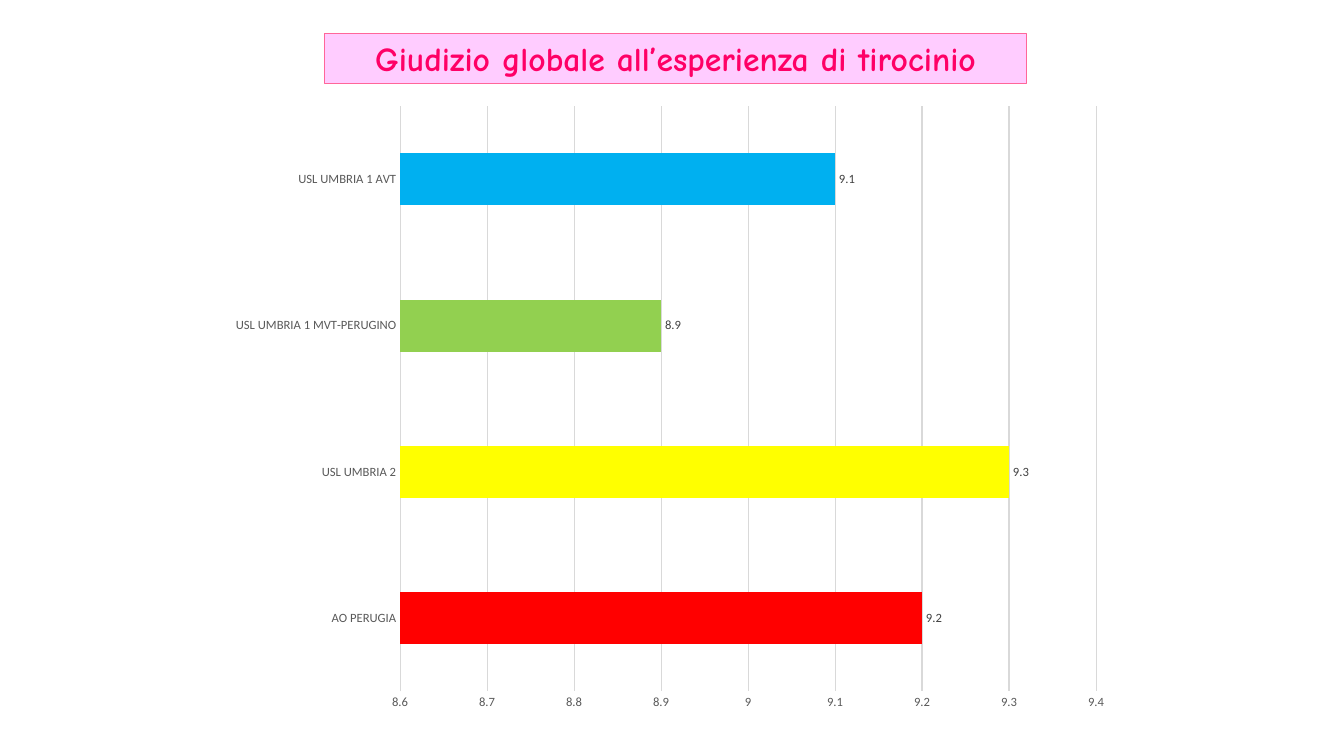
from dataclasses import dataclass

from pptx import Presentation
from pptx import util as u
from pptx.chart.data import CategoryChartData
from pptx.dml.color import RGBColor
from pptx.enum import chart as charts
from pptx.enum import shapes, text

COLORS = {
    "title_fill": "FFCCFF", "title_line": "FF6699", "title_text": "FF0066",
    "grid": "D9D9D9", "axis_text": "595959", "label_text": "404040",
    "black": "000000", "series": "FFC000",
    "red": "FF0000", "yellow": "FFFF00", "green": "92D050", "blue": "00B0F0",
}


@dataclass
class Rating:
    site: str
    score: float
    color: str


# Bars from bottom to top
RATINGS = [
    Rating("AO PERUGIA", 9.2, "red"),
    Rating("USL UMBRIA 2", 9.3, "yellow"),
    Rating("USL UMBRIA 1 MVT-PERUGINO", 8.9, "green"),
    Rating("USL UMBRIA 1 AVT", 9.1, "blue"),
]


def rgb(name: str) -> RGBColor:
    return RGBColor.from_string(COLORS[name])


def set_font(font, size: float, color: str, name: str = "Calibri", bold: bool = False) -> None:
    font.name = name
    font.size = u.Pt(size)
    font.bold = bold
    font.color.rgb = rgb(color)


def set_fill(fill, color: str) -> None:
    fill.solid()
    fill.fore_color.rgb = rgb(color)


def set_line(line, color: str) -> None:
    line.color.rgb = rgb(color)
    line.width = u.Pt(0.75)


def add_title(slide) -> None:
    shape = slide.shapes.add_shape(
        shapes.MSO_SHAPE.RECTANGLE,
        u.Inches(3.22), u.Inches(0.33), u.Inches(6.96), u.Inches(0.5))
    shape.shadow.inherit = False
    set_fill(shape.fill, "title_fill")
    set_line(shape.line, "title_line")
    frame = shape.text_frame
    frame.word_wrap = True
    frame.auto_size = text.MSO_AUTO_SIZE.SHAPE_TO_FIT_TEXT
    frame.vertical_anchor = text.MSO_ANCHOR.TOP
    paragraph = frame.paragraphs[0]
    paragraph.text = "Giudizio globale all’esperienza di tirocinio"
    paragraph.alignment = text.PP_ALIGN.CENTER
    set_font(paragraph.font, 24, "title_text", "Comic Neue", bold=True)


def style_axis(axis) -> None:
    axis.major_tick_mark = charts.XL_TICK_MARK.NONE
    axis.minor_tick_mark = charts.XL_TICK_MARK.NONE
    set_font(axis.tick_labels.font, 9, "axis_text")


def add_ratings_chart(slide) -> None:
    data = CategoryChartData()
    data.categories = [rating.site for rating in RATINGS]
    data.add_series("Series 1", [rating.score for rating in RATINGS])
    chart = slide.shapes.add_chart(
        charts.XL_CHART_TYPE.BAR_CLUSTERED,
        u.Inches(2.16), u.Inches(0.93), u.Inches(8.97), u.Inches(6.24), data).chart
    chart.has_title = False
    chart.has_legend = False
    set_font(chart.font, 10, "black")

    # Axes
    style_axis(chart.category_axis)
    set_line(chart.category_axis.format.line, "grid")
    value_axis = chart.value_axis
    style_axis(value_axis)
    value_axis.minimum_scale = 8.6
    value_axis.maximum_scale = 9.4
    value_axis.major_unit = 0.1
    value_axis.format.line.fill.background()
    value_axis.has_major_gridlines = True
    set_line(value_axis.major_gridlines.format.line, "grid")

    # Bars
    plot = chart.plots[0]
    plot.gap_width = 182
    plot.vary_by_categories = False
    series = plot.series[0]
    series.invert_if_negative = False
    set_fill(series.format.fill, "series")
    for index, rating in enumerate(RATINGS):
        set_fill(series.points[index].format.fill, rating.color)

    # Value labels
    labels = series.data_labels
    labels.show_value = True
    labels.position = charts.XL_LABEL_POSITION.OUTSIDE_END
    set_font(labels.font, 9, "label_text")


def main() -> None:
    presentation = Presentation()
    presentation.slide_width = u.Inches(13.33)
    presentation.slide_height = u.Inches(7.5)
    slide = presentation.slides.add_slide(presentation.slide_layouts[6])
    add_title(slide)
    add_ratings_chart(slide)
    presentation.save("out.pptx")


if __name__ == "__main__":
    main()
